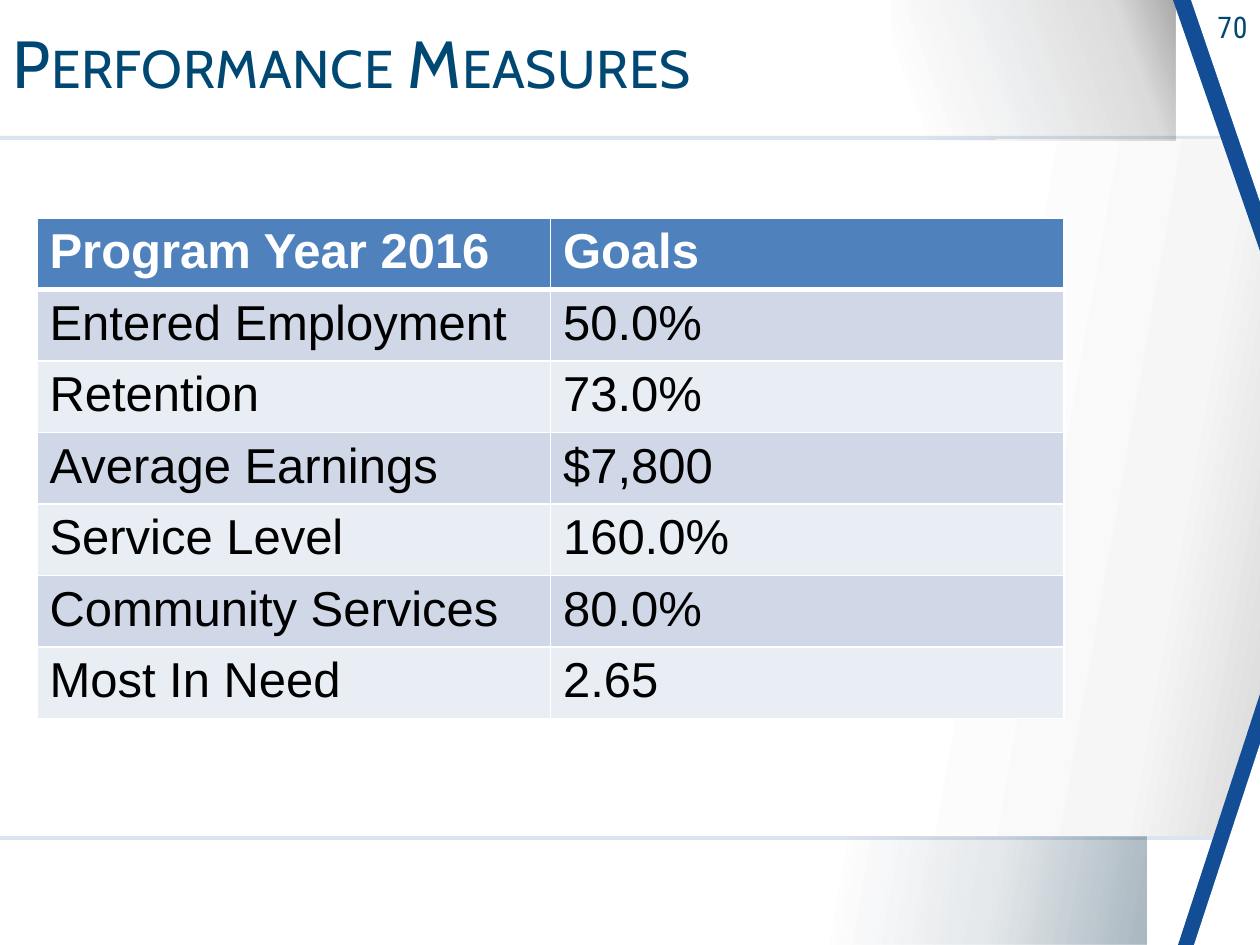
import pptx
import pptx.util
import pptx.dml.color
import pptx.enum.shapes
import pptx.enum.text
import pptx.oxml
import pptx.oxml.ns
from dataclasses import dataclass

SCALE = 914400 / 126
NS = pptx.oxml.ns.nsdecls("a")
KIND = pptx.enum.shapes.MSO_SHAPE
ALIGN = pptx.enum.text.PP_ALIGN


def px(n):
    return pptx.util.Emu(round(n * SCALE))


def rgb(code):
    return pptx.dml.color.RGBColor.from_string(code)


@dataclass
class Theme:
    white: str = "FFFFFF"
    black: str = "000000"
    ink: str = "004874"
    rule: str = "275A99"
    blade: str = "124D95"
    deep: str = "002C47"
    pale: str = "F6F6F6"
    gray: str = "D9D9D9"
    head: str = "4F81BD"
    odd: str = "D0D8E8"
    even: str = "E9EDF4"
    title: int = 38
    cell: int = 28
    page: int = 17
    serif: str = "Cabin"
    slim: str = "Roboto Condensed"
    body: str = "Arial"


class Maker:
    def __init__(self, deck, theme):
        self.theme = theme
        self.slide = deck.slides.add_slide(deck.slide_layouts[6])

    def shape(self, kind, box, color=None):
        item = self.slide.shapes.add_shape(kind, *map(px, box))
        item.shadow.inherit = False
        item.line.fill.background()
        if color:
            item.fill.solid()
            item.fill.fore_color.rgb = rgb(color)
        return item

    def tint(self, box, color, alpha):
        item = self.shape(KIND.RECTANGLE, box, color)
        node = item._element.spPr.find(".//" + pptx.oxml.ns.qn("a:srgbClr"))
        node.append(pptx.oxml.parse_xml(f'<a:alpha {NS} val="{alpha * 1000}"/>'))

    def fade(self, box, stops, angle):
        item = self.shape(KIND.RECTANGLE, box)
        marks = "".join(
            f'<a:gs pos="{pos * 1000}"><a:srgbClr val="{color}">'
            f'<a:alpha val="{alpha * 1000}"/></a:srgbClr></a:gs>'
            for pos, color, alpha in stops)
        grad = pptx.oxml.parse_xml(
            f'<a:gradFill {NS} rotWithShape="1"><a:gsLst>{marks}</a:gsLst>'
            f'<a:lin ang="{angle * 60000}" scaled="0"/></a:gradFill>')
        item._element.spPr.find(pptx.oxml.ns.qn("a:prstGeom")).addnext(grad)

    def wedge(self, box, color, down=False):
        item = self.shape(KIND.ISOSCELES_TRIANGLE, box, color)
        item.adjustments[0] = 1
        if down:
            item._element.spPr.xfrm.set("flipV", "1")

    def font(self, para, name, size, color, bold=False):
        para.font.name = name
        para.font.size = pptx.util.Pt(size)
        para.font.bold = bold
        para.font.color.rgb = rgb(color)

    def text(self, box, words, name, size, align=ALIGN.LEFT, lead=1.0, caps=False):
        frame = self.slide.shapes.add_textbox(*map(px, box)).text_frame
        frame.word_wrap = True
        frame.vertical_anchor = pptx.enum.text.MSO_ANCHOR.MIDDLE
        para = frame.paragraphs[0]
        para.text = words
        para.alignment = align
        para.line_spacing = lead
        self.font(para, name, size, self.theme.ink)
        for props in (para._p.pPr.get_or_add_defRPr(), para.runs[0]._r.get_or_add_rPr()):
            props.set("spc", "40")
            if caps:
                props.set("cap", "small")

    def edges(self, cell, base):
        props = cell._tc.get_or_add_tcPr()
        for spot, (side, width) in enumerate(zip("LRTB", (1, 1, 1, base))):
            props.insert(spot, pptx.oxml.parse_xml(
                f'<a:ln{side} {NS} w="{width * 12700}"><a:solidFill>'
                f'<a:srgbClr val="{self.theme.white}"/></a:solidFill></a:ln{side}>'))

    def table(self, box, rows):
        look = self.theme
        grid = self.slide.shapes.add_table(len(rows), len(rows[0]), *map(px, box)).table
        for r, row in enumerate(rows):
            fill = look.head if r == 0 else look.odd if r % 2 else look.even
            for c, words in enumerate(row):
                cell = grid.cell(r, c)
                cell.text = words
                self.font(cell.text_frame.paragraphs[0], look.body, look.cell,
                          look.black if r else look.white, r == 0)
                cell.fill.solid()
                cell.fill.fore_color.rgb = rgb(fill)
                self.edges(cell, 1 if r else 3)


def main():
    deck = pptx.Presentation()
    deck.slide_width, deck.slide_height = px(1260), px(945)
    look = Theme()
    make = Maker(deck, look)

    make.tint((0, 136, 1260, 704), look.rule, 16)
    make.fade((0, 140, 1260, 696),
              [(0, look.white, 100), (72, look.white, 100),
               (90, look.pale, 100), (100, look.gray, 100)], 10)
    make.fade((810, 837, 337, 108),
              [(10, look.deep, 0), (56, look.deep, 11), (100, look.deep, 34)], 10)
    make.fade((892, 0, 283, 141),
              [(10, look.deep, 0), (81, look.black, 14), (100, look.black, 34)], 340)

    make.wedge((1173, 0, 87, 251), look.blade, down=True)
    make.wedge((1191, 0, 69, 202), look.white, down=True)
    make.wedge((1178, 694, 82, 251), look.blade)
    make.wedge((1194, 744, 66, 201), look.white)

    make.text((1159, 2, 101, 49), "70", look.slim, look.page, ALIGN.RIGHT)
    make.text((0, 0, 1016, 136), "Performance Measures", look.serif, look.title,
              lead=0.85, caps=True)
    make.table((37, 218, 1027, 469), [
        ("Program Year 2016", "Goals"),
        ("Entered Employment", "50.0%"),
        ("Retention", "73.0%"),
        ("Average Earnings", "$7,800"),
        ("Service Level", "160.0%"),
        ("Community Services", "80.0%"),
        ("Most In Need", "2.65"),
    ])
    deck.save("out.pptx")


if __name__ == "__main__":
    main()
